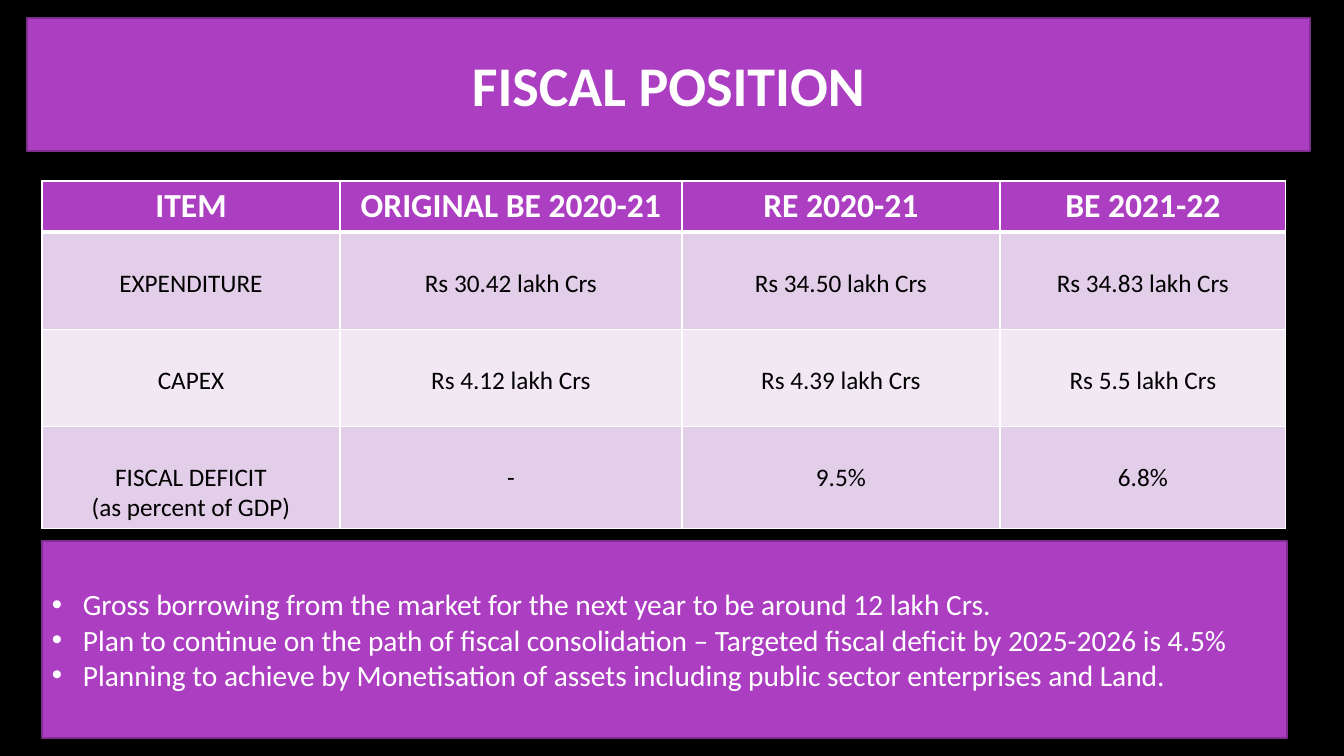
from lxml.etree import SubElement
from pptx import Presentation
from pptx.dml.color import RGBColor
from pptx.enum.shapes import MSO_SHAPE
from pptx.enum.text import MSO_ANCHOR, PP_ALIGN
from pptx.oxml.ns import qn
from pptx.util import Emu, Pt

EMU_PER_PX = 914400 / 100.8
FONT = "Calibri"
BLACK = RGBColor(0x00, 0x00, 0x00)
WHITE = RGBColor(0xFF, 0xFF, 0xFF)
PURPLE = RGBColor(0xAC, 0x3E, 0xC1)
DARK_PURPLE = RGBColor(0x7F, 0x2E, 0x8F)
LILAC = RGBColor(0xE3, 0xCE, 0xE9)
PALE_LILAC = RGBColor(0xF1, 0xE8, 0xF4)

COLUMN_WIDTHS = [298, 342, 318, 286]
ROW_HEIGHTS = [51, 97, 97, 102]
FISCAL_ROWS = [
    ["ITEM", "ORIGINAL BE 2020-21", "RE 2020-21", "BE 2021-22"],
    ["EXPENDITURE", "Rs 30.42 lakh Crs", "Rs 34.50 lakh Crs", "Rs 34.83 lakh Crs"],
    ["CAPEX", "Rs 4.12 lakh Crs", "Rs 4.39 lakh Crs", "Rs 5.5 lakh Crs"],
    ["FISCAL DEFICIT\n(as percent of GDP)", "-", "9.5%", "6.8%"],
]
OUTLOOK = [
    "Gross borrowing from the market for the next year to be around 12 lakh Crs.",
    "Plan to continue on the path of fiscal consolidation – Targeted fiscal deficit by 2025-2026 is 4.5%",
    "Planning to achieve by Monetisation of assets including public sector enterprises and Land.",
]


def px(value):
    return Emu(round(value * EMU_PER_PX))


def set_font(paragraph, size, color, bold=False):
    font = paragraph.font
    font.name = FONT
    font.size = Pt(size)
    font.bold = bold
    font.color.rgb = color


def add_bullet(paragraph, indent):
    properties = paragraph._p.get_or_add_pPr()
    properties.set("marL", str(px(indent)))
    properties.set("indent", str(-px(indent)))
    SubElement(properties, qn("a:buFont"), typeface="Arial")
    SubElement(properties, qn("a:buChar"), char="•")


def add_panel(slide, left, top, width, height, lines, size, bold=False, bulleted=False):
    shape = slide.shapes.add_shape(
        MSO_SHAPE.RECTANGLE, px(left), px(top), px(width), px(height))
    shape.shadow.inherit = False
    shape.fill.solid()
    shape.fill.fore_color.rgb = PURPLE
    shape.line.color.rgb = DARK_PURPLE
    shape.line.width = Pt(1.5)
    frame = shape.text_frame
    frame.word_wrap = True
    frame.vertical_anchor = MSO_ANCHOR.MIDDLE
    frame.text = "\n".join(lines)
    for paragraph in frame.paragraphs:
        paragraph.alignment = PP_ALIGN.LEFT if bulleted else PP_ALIGN.CENTER
        if bulleted:
            add_bullet(paragraph, 31)
        set_font(paragraph, size, WHITE, bold)


def set_borders(cell, top, bottom):
    properties = cell._tc.get_or_add_tcPr()
    for side, width in (("L", 1), ("R", 1), ("T", top), ("B", bottom)):
        line = SubElement(properties, qn(f"a:ln{side}"), w=str(Pt(width)))
        fill = SubElement(line, qn("a:solidFill"))
        SubElement(fill, qn("a:srgbClr"), val=str(WHITE))


def fill_cell(cell, text, row_index):
    is_header = row_index == 0
    set_borders(cell, 3 if row_index == 1 else 1, 3 if is_header else 1)
    cell.fill.solid()
    if is_header:
        cell.fill.fore_color.rgb = PURPLE
    else:
        cell.fill.fore_color.rgb = LILAC if row_index % 2 else PALE_LILAC
        cell.margin_top = px(36)
    cell.text = text
    for paragraph in cell.text_frame.paragraphs:
        paragraph.alignment = PP_ALIGN.CENTER
        if is_header:
            set_font(paragraph, 24, WHITE, True)
        else:
            set_font(paragraph, 18, BLACK)


def add_fiscal_table(slide, left, top):
    table = slide.shapes.add_table(
        len(ROW_HEIGHTS), len(COLUMN_WIDTHS), px(left), px(top),
        px(sum(COLUMN_WIDTHS)), px(sum(ROW_HEIGHTS))).table
    for column, width in zip(table.columns, COLUMN_WIDTHS):
        column.width = px(width)
    for row_index, (row, height) in enumerate(zip(table.rows, ROW_HEIGHTS)):
        row.height = px(height)
        for cell, text in zip(row.cells, FISCAL_ROWS[row_index]):
            fill_cell(cell, text, row_index)


def main():
    presentation = Presentation()
    presentation.slide_width = px(1344)
    presentation.slide_height = px(756)
    slide = presentation.slides.add_slide(presentation.slide_layouts[6])
    slide.background.fill.solid()
    slide.background.fill.fore_color.rgb = BLACK
    add_fiscal_table(slide, 42, 181)
    add_panel(slide, 27, 18, 1283, 133, ["FISCAL POSITION"], 40, bold=True)
    add_panel(slide, 42, 541, 1245, 197, OUTLOOK, 21, bulleted=True)
    presentation.save("out.pptx")


if __name__ == "__main__":
    main()
